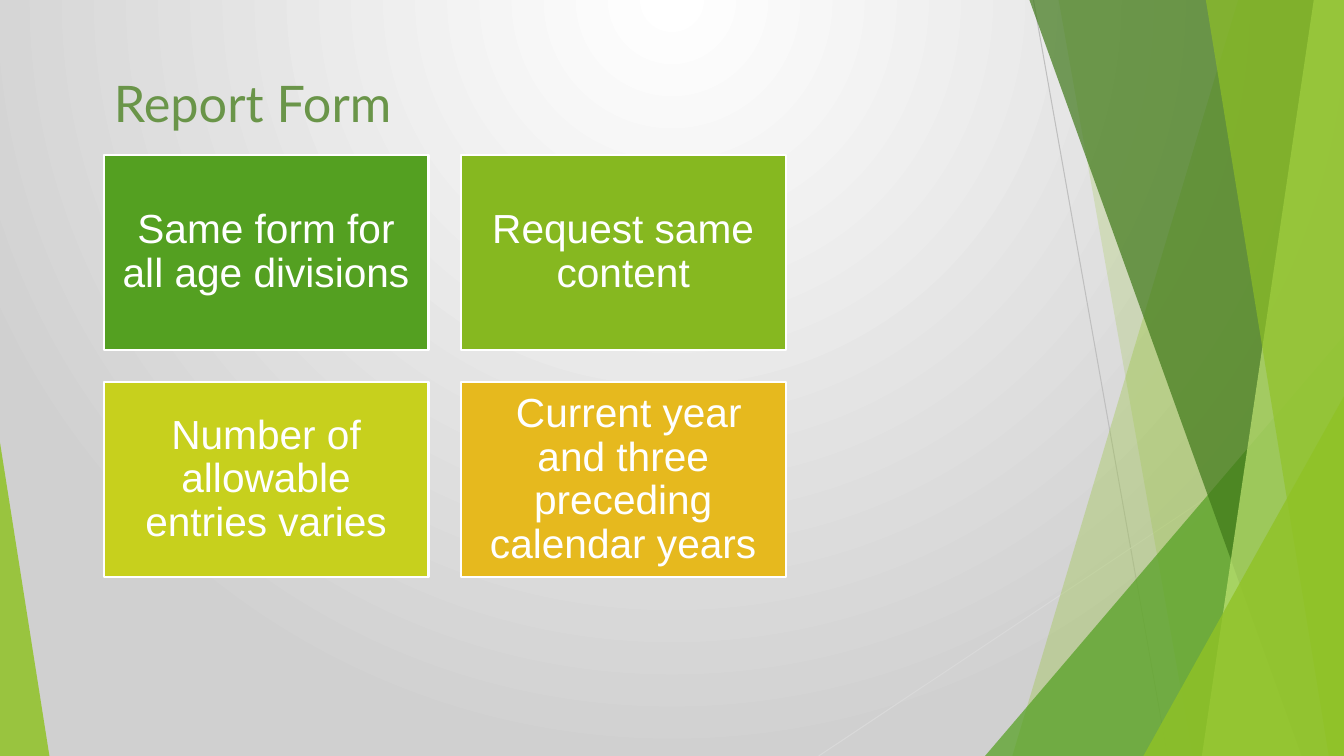
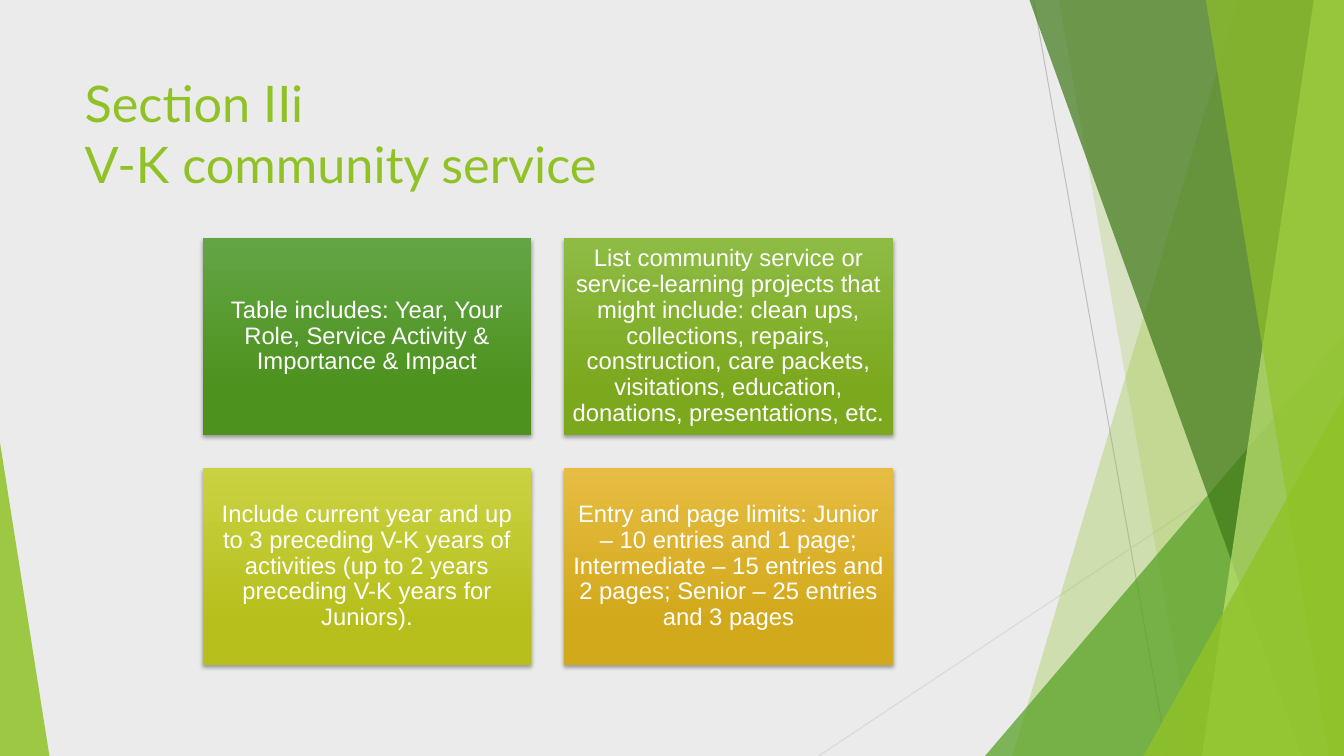
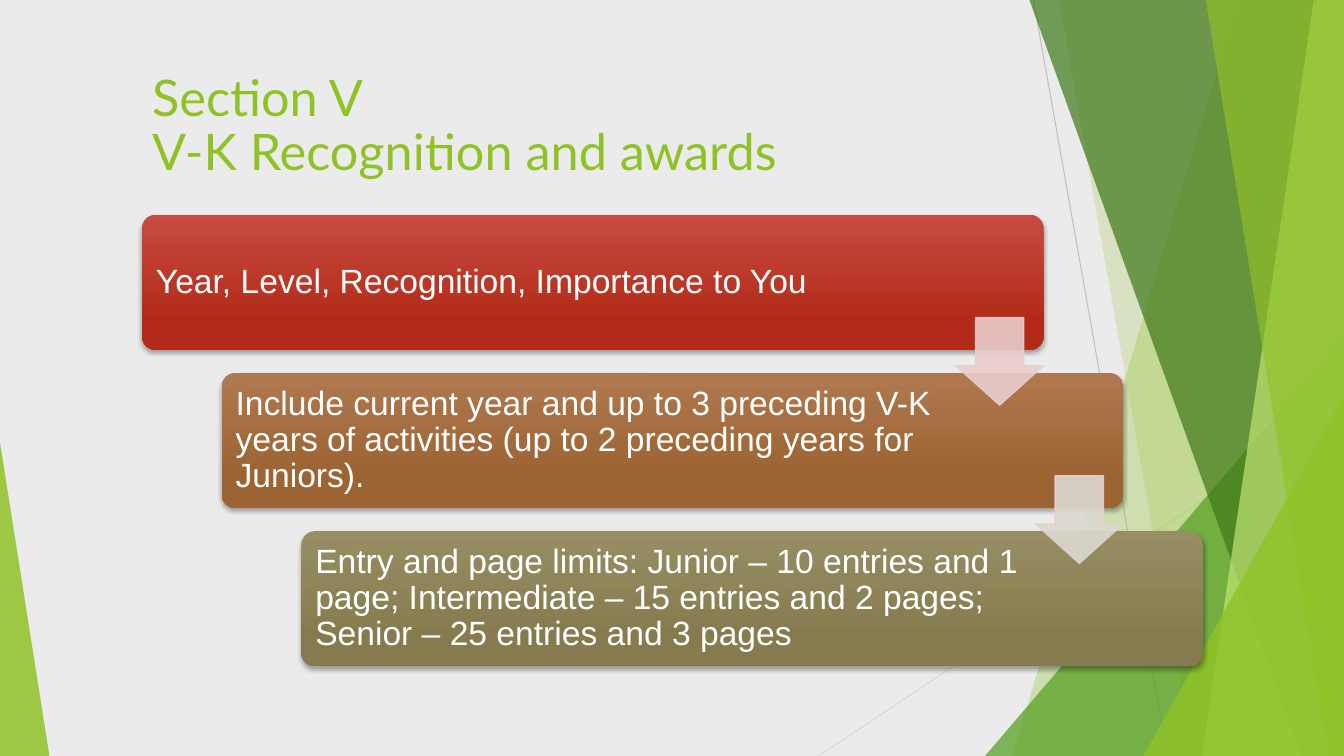
from lxml import etree
from pptx import Presentation, util as u
from pptx.dml.color import RGBColor
from pptx.enum import shapes, text
from pptx.oxml.ns import qn

W, H = 13.33, 7.5
C = {
    "white": "FFFFFF", "silver": "D0D0D0", "pale": "EBEBEB",
    "line": "BFBFBF", "faint": "D9D9D9",
    "lime": "90C226", "green": "54A021", "forest": "3F7819", "mint": "C0E474",
    "moss": "6A9549", "leaf": "86B820", "yellow": "C7D01D", "gold": "E6B91E",
    "pink": "EACDCD", "sand": "DCD9D1",
}
RGB = {name: RGBColor.from_string(value) for name, value in C.items()}
SHAPE = shapes.MSO_SHAPE


def fade(shape, percent):
    """Set the opacity of the fill and line of a shape."""
    for clr in shape.element.spPr.iter(qn("a:srgbClr")):
        etree.SubElement(clr, qn("a:alpha"), val=str(percent * 1000))


def panel(s, kind, box, words, size, inset, shades=None):
    """Add a text panel; two shades give a gradient fill and a soft shadow."""
    sp = s.shapes.add_shape(kind, *map(u.Inches, box))
    sp.shadow.inherit = False
    if shades:
        sp.line.fill.background()
        sp.fill.gradient()
        sp.fill.gradient_angle = 270
        for stop, place, shade in zip(sp.fill.gradient_stops, (0, 0.78), shades):
            stop.position = place
            stop.color.rgb = RGBColor.from_string(shade)
        effects = sp.element.spPr.find(qn("a:effectLst"))
        shadow = etree.SubElement(effects, qn("a:outerShdw"), blurRad=str(u.Pt(3)),
                                  dist=str(u.Pt(2)), dir="5400000", rotWithShape="0")
        black = etree.SubElement(shadow, qn("a:srgbClr"), val="000000")
        etree.SubElement(black, qn("a:alpha"), val="35000")
    tf = sp.text_frame
    tf.text, tf.word_wrap = words, True
    tf.vertical_anchor = text.MSO_ANCHOR.MIDDLE
    tf.margin_left = tf.margin_right = tf.margin_top = tf.margin_bottom = u.Inches(inset)
    p = tf.paragraphs[0]
    p.alignment, p.line_spacing = text.PP_ALIGN.CENTER, 0.9
    p.font.name, p.font.size, p.font.color.rgb = "Arial", u.Pt(size), RGB["white"]
    return sp


prs = Presentation()
prs.slide_width, prs.slide_height = u.Inches(W), u.Inches(H)
layout = prs.slide_layouts[5]
layout.background.fill.solid()
layout.background.fill.fore_color.rgb = RGB["pale"]
for ph in list(layout.placeholders)[1:]:
    ph.element.getparent().remove(ph.element)

# Slides and titles
TITLES = [
    ("Report Form", (1.03, 0.67, 3.33, 3.55), "moss", 1),
    ("Section IIi\vV-K community service", (0.74, 0.67, 9.4, 1.44), "lime", 1),
    ("Section V\vV-K Recognition and awards", (1.41, 0.67, 11.15, 1.2), "lime", 0.9),
]
for words, box, colour, spacing in TITLES:
    title = prs.slides.add_slide(layout).shapes.title
    title.left, title.top, title.width, title.height = map(u.Inches, box)
    tf = title.text_frame
    tf.text, tf.word_wrap = words, True
    tf.auto_size, tf.vertical_anchor = text.MSO_AUTO_SIZE.NONE, text.MSO_ANCHOR.TOP
    p = tf.paragraphs[0]
    p.alignment, p.line_spacing = text.PP_ALIGN.LEFT, spacing
    p.font.name, p.font.size, p.font.color.rgb = "Lato", u.Pt(36), RGB[colour]
form, service, awards = prs.slides

# Facets shared by all slides, moved to the layout
facets = form.shapes.add_group_shape()
for ends, colour in [((10.25, 0, 11.58, H), "line"), ((W, 4.03, 8.12, H), "faint")]:
    cn = facets.shapes.add_connector(shapes.MSO_CONNECTOR.STRAIGHT, *map(u.Inches, ends))
    cn.line.color.rgb, cn.line.width = RGB[colour], u.Pt(0.75)
    etree.SubElement(cn.element.spPr, qn("a:effectLst"))

# Bands give their top-left and bottom-left x; triangles give box and apex
FACETS = [
    ((12.28, 10.04), None, "lime", 30),
    ((10.5, 11.83), None, "lime", 20),
    ((9.77, 3.33, W - 9.77, H - 3.33), 1, "green", 72),
    ((10.21, 12.91), None, "forest", 70),
    ((13.03, 11.92), None, "mint", 70),
    ((11.96, 13.18), None, "lime", 65),
    ((11.34, 3.93, W - 11.34, H - 3.93), 1, "lime", 80),
    ((0, 4.39, 0.49, H - 4.39), 0, "lime", 85),
]
for place, apex, colour, opacity in FACETS:
    if apex is None:
        top, bottom = place
        outline = facets.shapes.build_freeform(u.Inches(top), 0)
        corners = [(W, 0), (W, H), (bottom, H)]
        outline.add_line_segments([(u.Inches(x), u.Inches(y)) for x, y in corners])
        sp = outline.convert_to_shape()
    else:
        sp = facets.shapes.add_shape(SHAPE.ISOSCELES_TRIANGLE, *map(u.Inches, place))
        sp.adjustments[0] = apex
    sp.shadow.inherit = False
    sp.fill.solid()
    sp.fill.fore_color.rgb = RGB[colour]
    sp.line.fill.background()
    fade(sp, opacity)
layout.shapes.element.insert(2, facets.element)

# Slide 1: radial background
fill = form.background.fill
fill.gradient()
for stop, colour in zip(fill.gradient_stops, ("white", "silver")):
    stop.color.rgb = RGB[colour]
grad = form.element.find(".//" + qn("a:gradFill"))
grad.remove(grad.find(qn("a:lin")))
radial = etree.SubElement(grad, qn("a:path"), path="circle")
etree.SubElement(radial, qn("a:fillToRect"), l="50000", t="0", r="50000", b="100000")

# Slides 1 and 2: two by two cards, height 0.6 and gap 0.1 of the card width
FORM_CARDS = [
    ("Same form for all age divisions", "green"),
    ("Request same content", "leaf"),
    ("Number of allowable entries varies", "yellow"),
    (" Current year and three preceding calendar years", "gold"),
]
LIMITS = ("Entry and page limits: Junior – 10 entries and 1 page; Intermediate – "
          "15 entries and 2 pages; Senior – 25 entries and 3 pages")
SERVICE_CARDS = [
    ("Table includes: Year, Your Role, Service Activity & Importance & Impact",
     ("63A545", "4D921E")),
    ("List community service or service-learning projects that might include: "
     "clean ups, collections, repairs, construction, care packets, visitations, "
     "education, donations, presentations, etc.", ("8EBB44", "7BA81D")),
    ("Include current year and up to 3 preceding V-K years of activities "
     "(up to 2 years preceding V-K years for Juniors).", ("CAD243", "B6BF1B")),
    (LIMITS, ("E7BC43", "D2A91B")),
]
GRIDS = [
    (form, FORM_CARDS, 1.03, 1.54, 3.22, 29, 0.12),
    (service, SERVICE_CARDS, 2.01, 2.36, 3.26, 17, 0.07),
]
for s, cards, left, top, width, size, inset in GRIDS:
    for i, (words, paint) in enumerate(cards):
        row, col = divmod(i, 2)
        box = (left + col * 1.1 * width, top + row * 0.7 * width, width, 0.6 * width)
        if s is service:
            panel(s, SHAPE.RECTANGLE, box, words, size, inset, paint)
        else:
            sp = panel(s, SHAPE.RECTANGLE, box, words, size, inset)
            sp.fill.solid()
            sp.fill.fore_color.rgb = RGB[paint]
            sp.line.color.rgb, sp.line.width = RGB["white"], u.Pt(1.5)

# Slide 3: staircase of steps, then the arrows between them
STEPS = [
    ("Year, Level, Recognition, Importance to You", ("C74B42", "B32B18")),
    ("Include current year and up to 3 preceding V-K years of activities "
     "(up to 2 preceding years for Juniors).", ("AF784F", "9C6432")),
    (LIMITS, ("988E64", "857B4E")),
]
LEFT, TOP, WIDTH, HEIGHT, ARROW = 1.41, 2.13, 8.94, 1.34, 0.87
corners = [(LEFT + i * 0.79, TOP + i * 1.57) for i in range(len(STEPS))]
for (x, y), (words, shades) in zip(corners, STEPS):
    sp = panel(awards, SHAPE.ROUNDED_RECTANGLE, (x, y, WIDTH, HEIGHT), words, 24, 0.1, shades)
    sp.adjustments[0] = 0.1
    sp.text_frame.margin_right = u.Inches(1.76)
    sp.text_frame.paragraphs[0].alignment = text.PP_ALIGN.LEFT
for (x, y), colour in zip(corners, ("pink", "sand")):
    box = (x + WIDTH - ARROW, y + 1.02, ARROW, ARROW)
    sp = awards.shapes.add_shape(SHAPE.DOWN_ARROW, *map(u.Inches, box))
    sp.adjustments[0], sp.adjustments[1] = 0.55, 0.45
    sp.shadow.inherit = False
    sp.fill.solid()
    sp.fill.fore_color.rgb = RGB[colour]
    sp.line.color.rgb, sp.line.width = RGB["pink"], u.Pt(1)
    fade(sp, 90)

prs.save("out.pptx")
